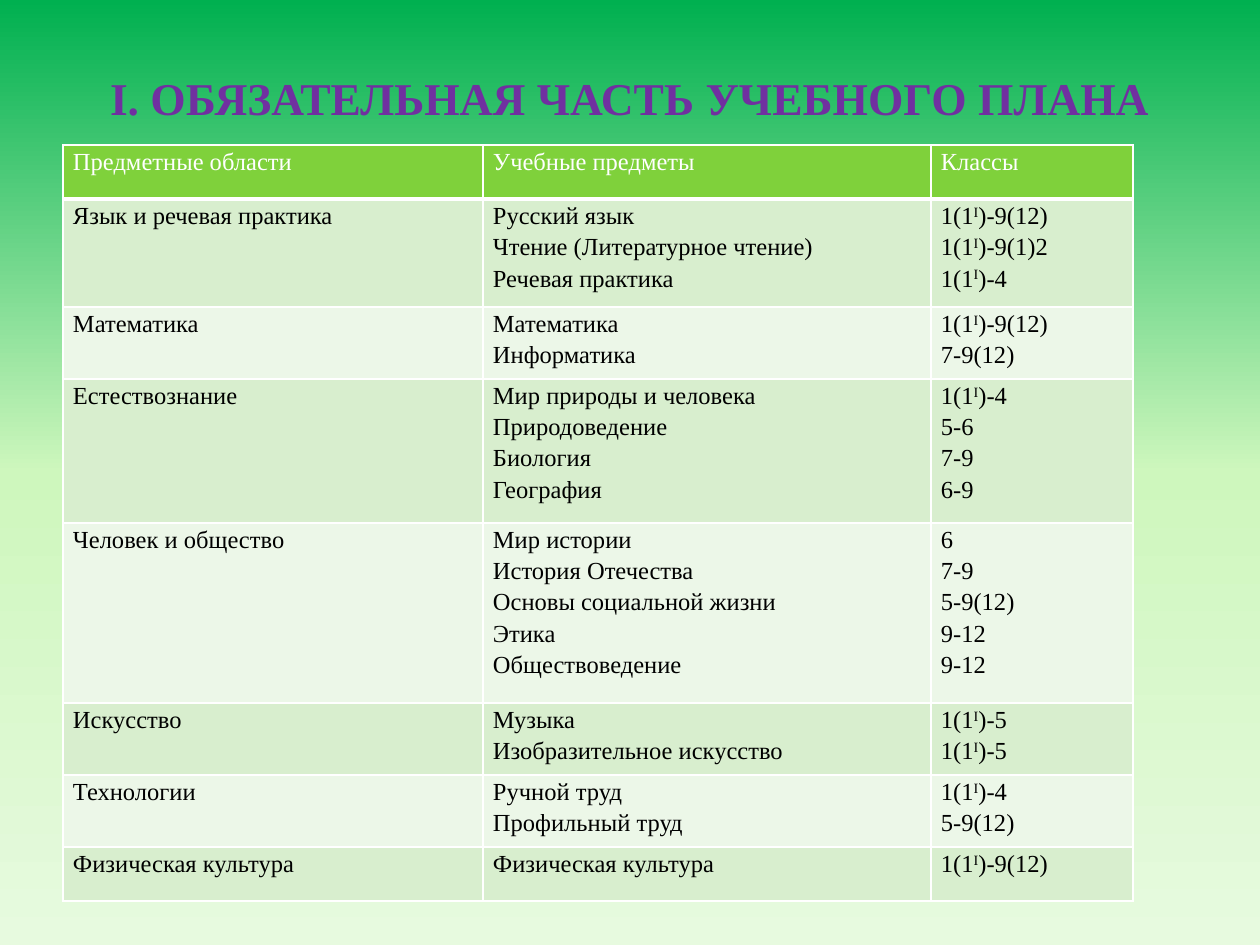
from lxml.etree import SubElement
from pptx import Presentation
from pptx.dml.color import RGBColor
from pptx.enum.text import MSO_ANCHOR, PP_ALIGN
from pptx.oxml import parse_xml
from pptx.oxml.ns import nsdecls, qn
from pptx.util import Pt

PX = 914400 // 126  # EMU per px
FONT = "Times New Roman"

# Content: text between ^ marks is superscript
TITLE = "I. ОБЯЗАТЕЛЬНАЯ ЧАСТЬ УЧЕБНОГО ПЛАНА"
HEADER = ("Предметные области", ["Учебные предметы"], ["Классы"])
AREAS = [
    ("Язык и речевая практика",
     ["Русский язык", "Чтение (Литературное чтение)", "Речевая практика"],
     ["1(1^I^)-9(12)", "1(1^I^)-9(1)2", "1(1^I^)-4"]),
    ("Математика", ["Математика", "Информатика"], ["1(1^I^)-9(12)", "7-9(12)"]),
    ("Естествознание",
     ["Мир природы и человека", "Природоведение", "Биология", "География"],
     ["1(1^I^)-4", "5-6", "7-9", "6-9"]),
    ("Человек и общество",
     ["Мир истории", "История Отечества", "Основы социальной жизни", "Этика",
      "Обществоведение"],
     ["6", "7-9", "5-9(12)", "9-12", "9-12"]),
    ("Искусство", ["Музыка", "Изобразительное искусство"],
     ["1(1^I^)-5", "1(1^I^)-5"]),
    ("Технологии", ["Ручной труд", "Профильный труд"], ["1(1^I^)-4", "5-9(12)"]),
    ("Физическая культура", ["Физическая культура"], ["1(1^I^)-9(12)"]),
]
COL_WIDTHS = (420, 448, 202)
LINE_HEIGHT, MIN_HEIGHT = 36, 54
GRADIENT = [(0, "00B050"), (50, "CEF7BD"), (100, "E7FADF")]
HEADER_FILL, BANDS = "7FD13B", ("D8EECE", "ECF7E8")


def px(n):
    return n * PX


def rgb(value):
    return RGBColor.from_string(value)


def write(tf, lines, size=14, color="000000", bold=False,
          align=PP_ALIGN.JUSTIFY, spacing=1.15):
    for i, line in enumerate(lines):
        p = tf.paragraphs[0] if i == 0 else tf.add_paragraph()
        p.alignment, p.line_spacing = align, spacing
        for j, part in enumerate(line.split("^")):
            r = p.add_run()
            r.text = part
            r.font.name, r.font.size, r.font.bold = FONT, Pt(size), bold
            r.font.color.rgb = rgb(color)
            if j % 2:
                r._r.get_or_add_rPr().set("baseline", "30000")


def set_borders(cell, bottom=1):
    tcPr = cell._tc.get_or_add_tcPr()
    for tag, width in (("lnL", 1), ("lnR", 1), ("lnT", 1), ("lnB", bottom)):
        ln = SubElement(tcPr, qn(f"a:{tag}"), w=str(Pt(width)))
        fill = SubElement(ln, qn("a:solidFill"))
        SubElement(fill, qn("a:srgbClr"), val="FFFFFF")


def set_background(slide):
    stops = "".join(f'<a:gs pos="{pos * 1000}"><a:srgbClr val="{color}"/></a:gs>'
                    for pos, color in GRADIENT)
    slide.background.fill.solid()
    bgPr = slide._element.cSld.bg.bgPr
    bgPr.replace(bgPr[0], parse_xml(
        f'<a:gradFill {nsdecls("a")} rotWithShape="1"><a:gsLst>{stops}</a:gsLst>'
        '<a:lin ang="5400000" scaled="0"/></a:gradFill>'))


prs = Presentation()
prs.slide_width, prs.slide_height = px(1260), px(945)
s = prs.slides.add_slide(prs.slide_layouts[5])
set_background(s)

# Title
title = s.shapes.title
title.left, title.top, title.width, title.height = px(63), 0, px(1134), px(195)
title.text_frame.vertical_anchor = MSO_ANCHOR.MIDDLE
write(title.text_frame, [TITLE], size=26, color="7030A0", bold=True,
      align=PP_ALIGN.CENTER, spacing=1.0)

# Table: row height follows the number of subjects
rows = [HEADER] + AREAS
heights = [max(MIN_HEIGHT, LINE_HEIGHT * len(row[1])) for row in rows]
table = s.shapes.add_table(len(rows), len(COL_WIDTHS), px(63), px(145),
                           px(sum(COL_WIDTHS)), px(sum(heights))).table
for column, width in zip(table.columns, COL_WIDTHS):
    column.width = px(width)
for i, (area, subjects, classes) in enumerate(rows):
    table.rows[i].height = px(heights[i])
    is_header = i == 0
    for j, lines in enumerate(([area], subjects, classes)):
        cell = table.cell(i, j)
        cell.margin_left = cell.margin_right = px(10)
        cell.margin_top = cell.margin_bottom = 0
        set_borders(cell, bottom=3 if is_header else 1)
        cell.fill.solid()
        cell.fill.fore_color.rgb = rgb(HEADER_FILL if is_header else BANDS[(i - 1) % 2])
        write(cell.text_frame, lines, color="FFFFFF" if is_header else "000000")

prs.save("out.pptx")
